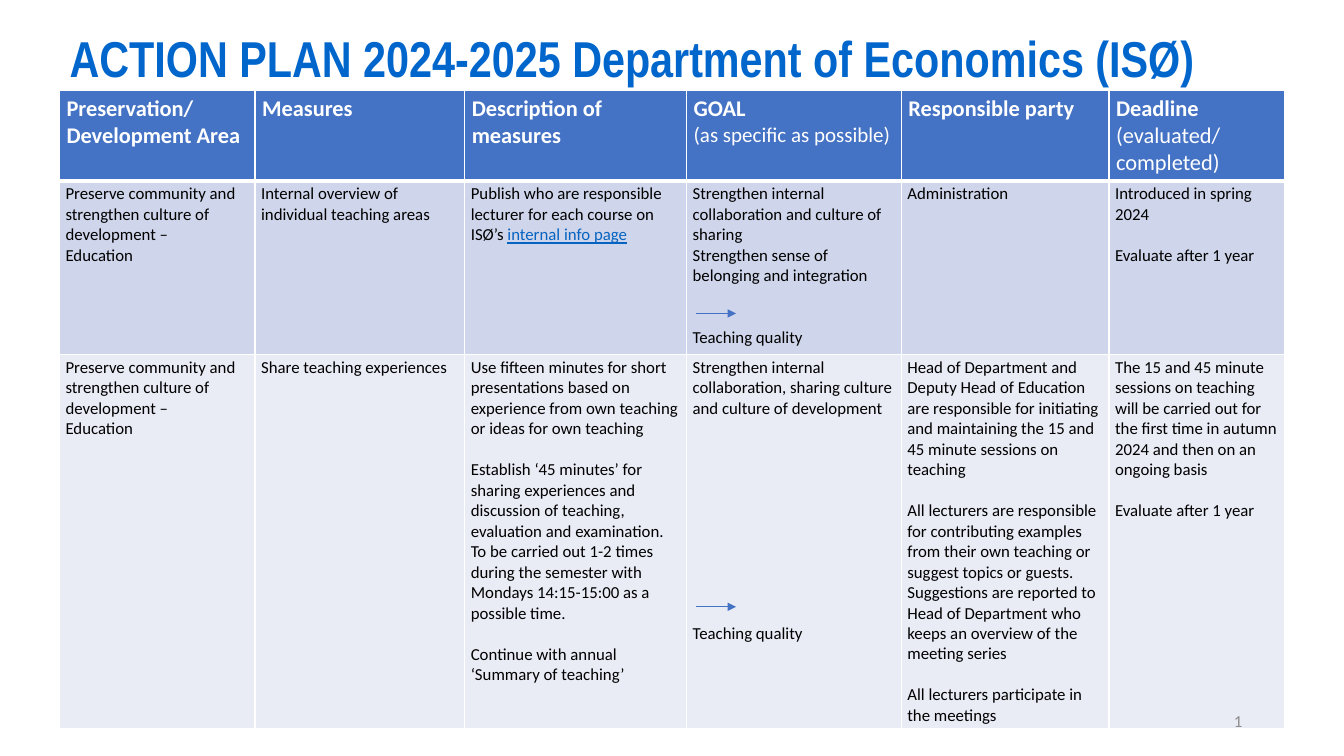
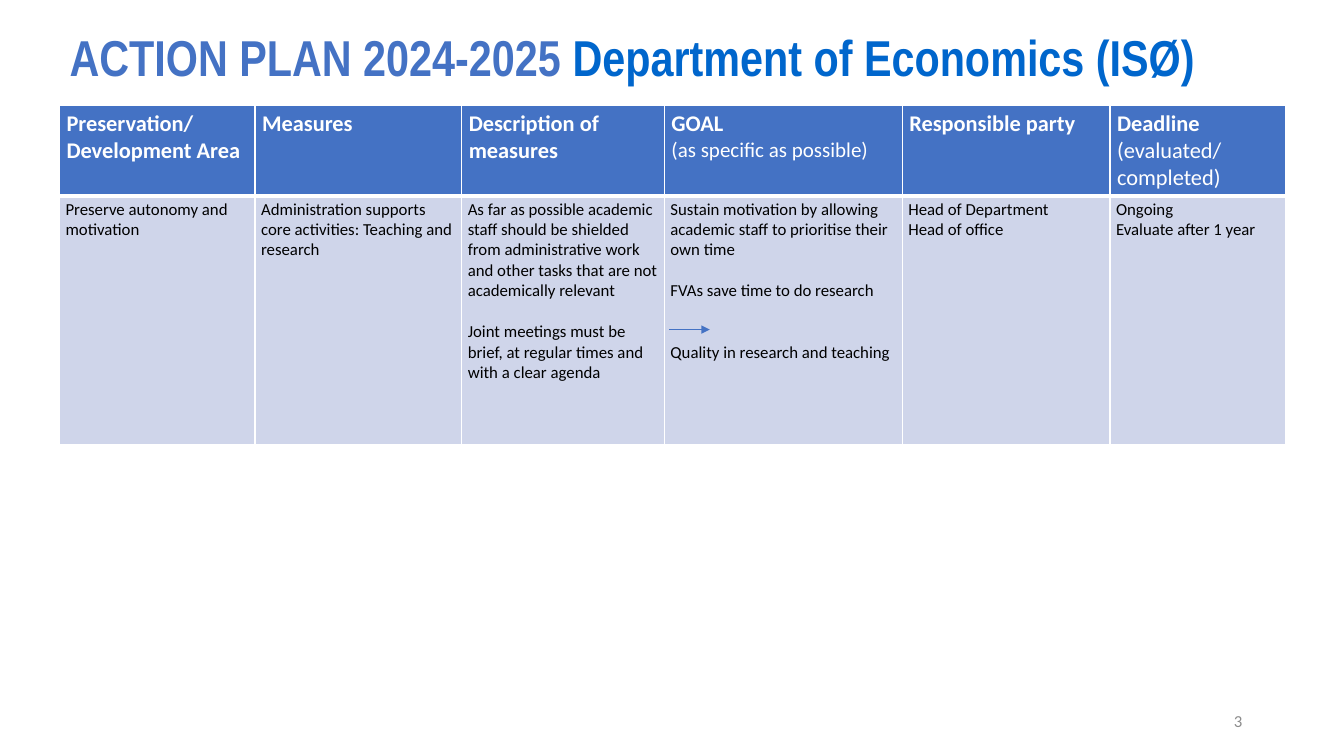
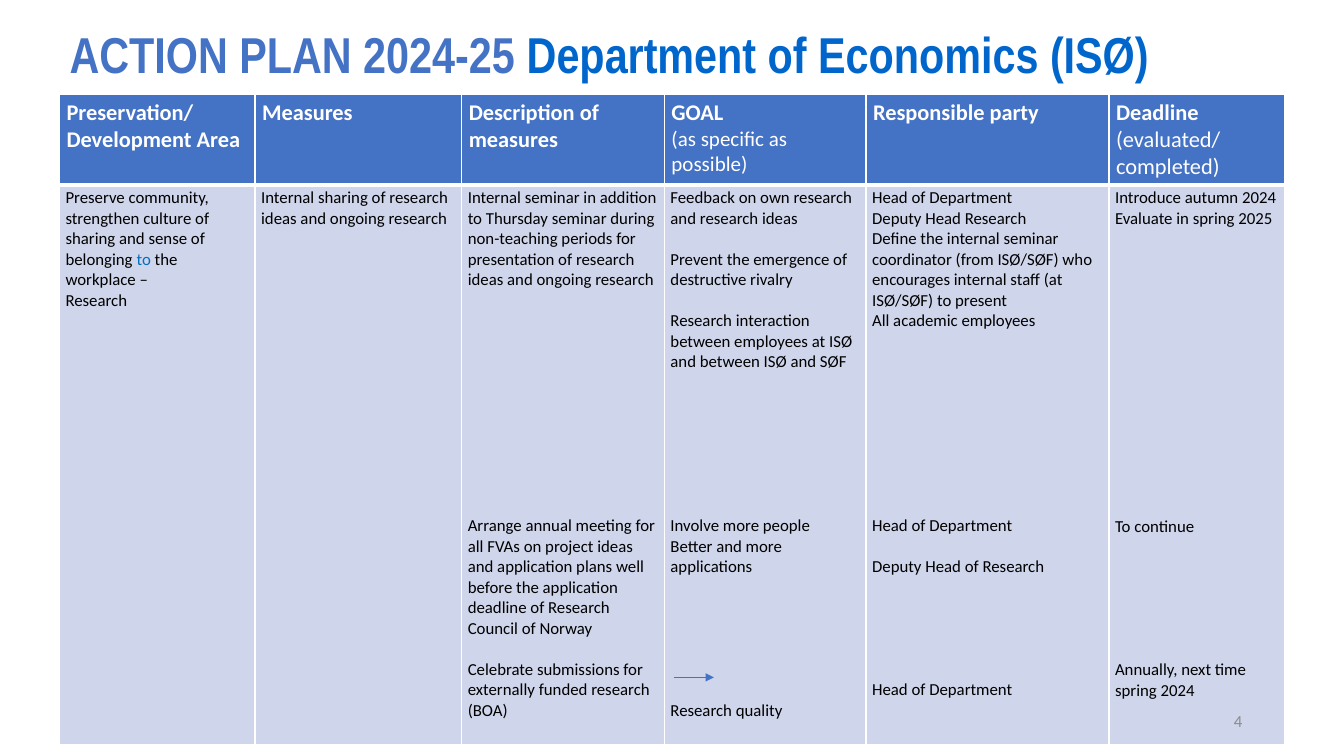
import lxml.etree
import pptx
import pptx.dml.color
import pptx.enum.shapes
import pptx.enum.text
import pptx.oxml.ns
import pptx.util

PX = 9144
LINE_PT = 14.65
qn = pptx.oxml.ns.qn
MIDDLE = pptx.enum.text.MSO_ANCHOR.MIDDLE
ALIGN = pptx.enum.text.PP_ALIGN

COLOURS = {
    "title": "0066CC",
    "header": "4472C4",
    "odd": "CFD5EA",
    "even": "E9EBF5",
    "white": "FFFFFF",
    "text": "000000",
    "link": "0563C1",
    "accent": "0070C0",
    "number": "8C8C8C",
}
ACCENTS = {"internal info page": "link", " to ": "accent"}

HEADINGS = [
    (["Preservation/", "Development Area"], [], 16),
    (["Measures"], [], 16),
    (["Description of measures"], [], 16),
    (["GOAL"], ["(as specific as possible)"], 15),
    (["Responsible party"], [], 16),
    (["Deadline"], ["(evaluated/", "completed)"], 16),
]
DEPARTMENT = "Department of Economics (ISØ)"
EDUCATION = ["Preserve community and strengthen culture of development –", "Education"]

# In a cell, a number is a gap in text lines and a tuple is one paragraph of several runs.
PLANS = [
    {
        "number": 1,
        "title": ("ACTION PLAN 2024-2025 ", "title", 32, 57),
        "top": 90,
        "columns": [194, 208, 220, 213, 206, 174],
        "rows": [86, 172, 367],
        "arrows": [(690, 311), (690, 602)],
        "measures": [
            [
                EDUCATION,
                ["Internal overview of individual teaching areas"],
                [("Publish who are responsible lecturer for each course on ISØ’s ",
                  "internal info page")],
                ["Strengthen internal collaboration and culture of sharing",
                 "Strengthen sense of belonging and integration", 2,
                 "Teaching quality"],
                ["Administration"],
                ["Introduced in spring 2024", 1, "Evaluate after 1 year"],
            ],
            [
                EDUCATION,
                ["Share teaching experiences"],
                ["Use fifteen minutes for short presentations based on experience "
                 "from own teaching or ideas for own teaching", 1,
                 "Establish ‘45 minutes’ for sharing experiences and discussion of "
                 "teaching, evaluation and examination.",
                 "To be carried out 1-2 times during the semester with Mondays "
                 "14:15-15:00 as a possible time.", 1,
                 "Continue with annual ‘Summary of teaching’"],
                ["Strengthen internal collaboration, sharing culture and culture of "
                 "development", 10, "Teaching quality"],
                ["Head of Department and Deputy Head of Education are responsible for "
                 "initiating and maintaining the 15 and 45 minute sessions on teaching", 1,
                 "All lecturers are responsible for contributing examples from their own "
                 "teaching or suggest topics or guests. Suggestions are reported to Head "
                 "of Department who keeps an overview of the meeting series", 1,
                 "All lecturers participate in the meetings"],
                ["The 15 and 45 minute sessions on teaching will be carried out for the "
                 "first time in autumn 2024 and then on an ongoing basis", 1,
                 "Evaluate after 1 year"],
            ],
        ],
    },
    {
        "number": 3,
        "title": ("ACTION PLAN 2024-2025 ", "header", 32, 56),
        "top": 105,
        "columns": [194, 205, 201, 236, 206, 174],
        "rows": [84, 247],
        "arrows": [(664, 327)],
        "measures": [
            [
                ["Preserve autonomy and motivation"],
                ["Administration supports core activities: Teaching and research"],
                ["As far as possible academic staff should be shielded from "
                 "administrative work and other tasks that are not academically "
                 "relevant", 1,
                 "Joint meetings must be brief, at regular times and with a clear agenda"],
                ["Sustain motivation by allowing academic staff to prioritise their own "
                 "time", 1, "FVAs save time to do research", 2,
                 "Quality in research and teaching"],
                ["Head of Department", "Head of office"],
                ["Ongoing", "Evaluate after 1 year"],
            ],
        ],
    },
    {
        "number": 4,
        "title": ("ACTION PLAN 2024-25 ", "header", 26, 62),
        "top": 94,
        "columns": [194, 205, 201, 200, 241, 174],
        "rows": [85, 555],
        "arrows": [(668, 672)],
        "measures": [
            [
                [("Preserve community, strengthen culture of sharing and sense of "
                  "belonging", " to ", "the workplace –"), "Research"],
                ["Internal sharing of research ideas and ongoing research"],
                ["Internal seminar in addition to Thursday seminar during non-teaching "
                 "periods for presentation of research ideas and ongoing research", 11,
                 "Arrange annual meeting for all FVAs on project ideas and application "
                 "plans well before the application deadline of Research Council of "
                 "Norway", 1,
                 "Celebrate submissions for externally funded research (BOA)"],
                ["Feedback on own research and research ideas", 1,
                 "Prevent the emergence of destructive rivalry", 1,
                 "Research interaction between employees at ISØ and between ISØ and SØF",
                 7, "Involve more people", "Better and more applications", 6,
                 "Research quality"],
                ["Head of Department", "Deputy Head Research",
                 "Define the internal seminar coordinator (from ISØ/SØF) who encourages "
                 "internal staff (at ISØ/SØF) to present", "All academic employees", 9,
                 "Head of Department", 1, "Deputy Head of Research", 5,
                 "Head of Department"],
                ["Introduce autumn 2024", "Evaluate in spring 2025", 14,
                 "To continue", 6, "Annually, next time spring 2024"],
            ],
        ],
    },
]


def add_run(paragraph, text, size, colour, bold=False, font="Calibri"):
    run = paragraph.add_run()
    run.text = text
    run.font.name = font
    run.font.size = pptx.util.Pt(size)
    run.font.bold = bold
    run.font.color.rgb = pptx.dml.color.RGBColor.from_string(COLOURS[colour])
    return run


def format_cell(cell, fill, margins, top_width, bottom_width):
    borders = cell._tc.get_or_add_tcPr()
    for side, width in (("L", 1), ("R", 1), ("T", top_width), ("B", bottom_width)):
        border = lxml.etree.SubElement(borders, qn("a:ln" + side), w=str(width * 12700))
        paint = lxml.etree.SubElement(border, qn("a:solidFill"))
        lxml.etree.SubElement(paint, qn("a:srgbClr"), val=COLOURS["white"])
    cell.fill.solid()
    cell.fill.fore_color.rgb = pptx.dml.color.RGBColor.from_string(COLOURS[fill])
    cell.margin_left = cell.margin_right = margins[0] * PX
    cell.margin_top = cell.margin_bottom = margins[1] * PX


deck = pptx.Presentation()
deck.slide_width = 1333 * PX
deck.slide_height = 750 * PX

for plan in PLANS:
    slide = deck.slides.add_slide(deck.slide_layouts[5])

    period, period_colour, title_top, title_height = plan["title"]
    title = slide.shapes.title
    title.left, title.top = 59 * PX, title_top * PX
    title.width, title.height = 1200 * PX, title_height * PX
    title.text_frame.auto_size = pptx.enum.text.MSO_AUTO_SIZE.NONE
    title.text_frame.vertical_anchor = MIDDLE
    heading = title.text_frame.paragraphs[0]
    heading.alignment = ALIGN.LEFT
    heading.line_spacing = 0.9
    add_run(heading, period, 36, period_colour, True, "Arial Narrow")
    add_run(heading, DEPARTMENT, 36, "title", True, "Arial Narrow")

    columns, rows = plan["columns"], plan["rows"]
    actions = slide.shapes.add_table(
        len(rows), len(columns), 59 * PX, plan["top"] * PX,
        sum(columns) * PX, sum(rows) * PX).table
    for column, width in zip(actions.columns, columns):
        column.width = width * PX
    for row, height in zip(actions.rows, rows):
        row.height = height * PX

    for column, (labels, notes, note_size) in enumerate(HEADINGS):
        cell = actions.cell(0, column)
        format_cell(cell, "header", (7, 4), 1, 3)
        lines = [(label, 16, True) for label in labels]
        lines += [(note, note_size, False) for note in notes]
        for index, (text, size, bold) in enumerate(lines):
            frame = cell.text_frame
            paragraph = frame.add_paragraph() if index else frame.paragraphs[0]
            add_run(paragraph, text, size, "white", bold)

    for row, measure in enumerate(plan["measures"], 1):
        for column, entries in enumerate(measure):
            cell = actions.cell(row, column)
            format_cell(cell, "odd" if row % 2 else "even", (6, 3), 3 if row == 1 else 1, 1)
            paragraph, gap = cell.text_frame.paragraphs[0], 0
            for index, entry in enumerate(entries):
                if isinstance(entry, int):
                    gap = entry
                    continue
                if index:
                    paragraph = cell.text_frame.add_paragraph()
                if gap:
                    paragraph.space_before = pptx.util.Pt(gap * LINE_PT)
                    gap = 0
                for text in entry if isinstance(entry, tuple) else (entry,):
                    run = add_run(paragraph, text, 12, ACCENTS.get(text, "text"))
                    if ACCENTS.get(text) == "link":
                        run.font.underline = True

    for left, top in plan["arrows"]:
        arrow = slide.shapes.add_connector(
            pptx.enum.shapes.MSO_CONNECTOR.STRAIGHT,
            left * PX, top * PX, (left + 40) * PX, top * PX)
        arrow.line.color.rgb = pptx.dml.color.RGBColor.from_string(COLOURS["header"])
        arrow.line.width = pptx.util.Pt(0.5)
        outline = arrow.element.spPr.find(qn("a:ln"))
        lxml.etree.SubElement(outline, qn("a:tailEnd"), type="triangle")
        lxml.etree.SubElement(arrow.element.spPr, qn("a:effectLst"))

    page_number = slide.shapes.add_textbox(942 * PX, 695 * PX, 300 * PX, 40 * PX).text_frame
    page_number.word_wrap = True
    page_number.vertical_anchor = MIDDLE
    page_number.paragraphs[0].alignment = ALIGN.RIGHT
    add_run(page_number.paragraphs[0], str(plan["number"]), 12, "number")

deck.save("out.pptx")
